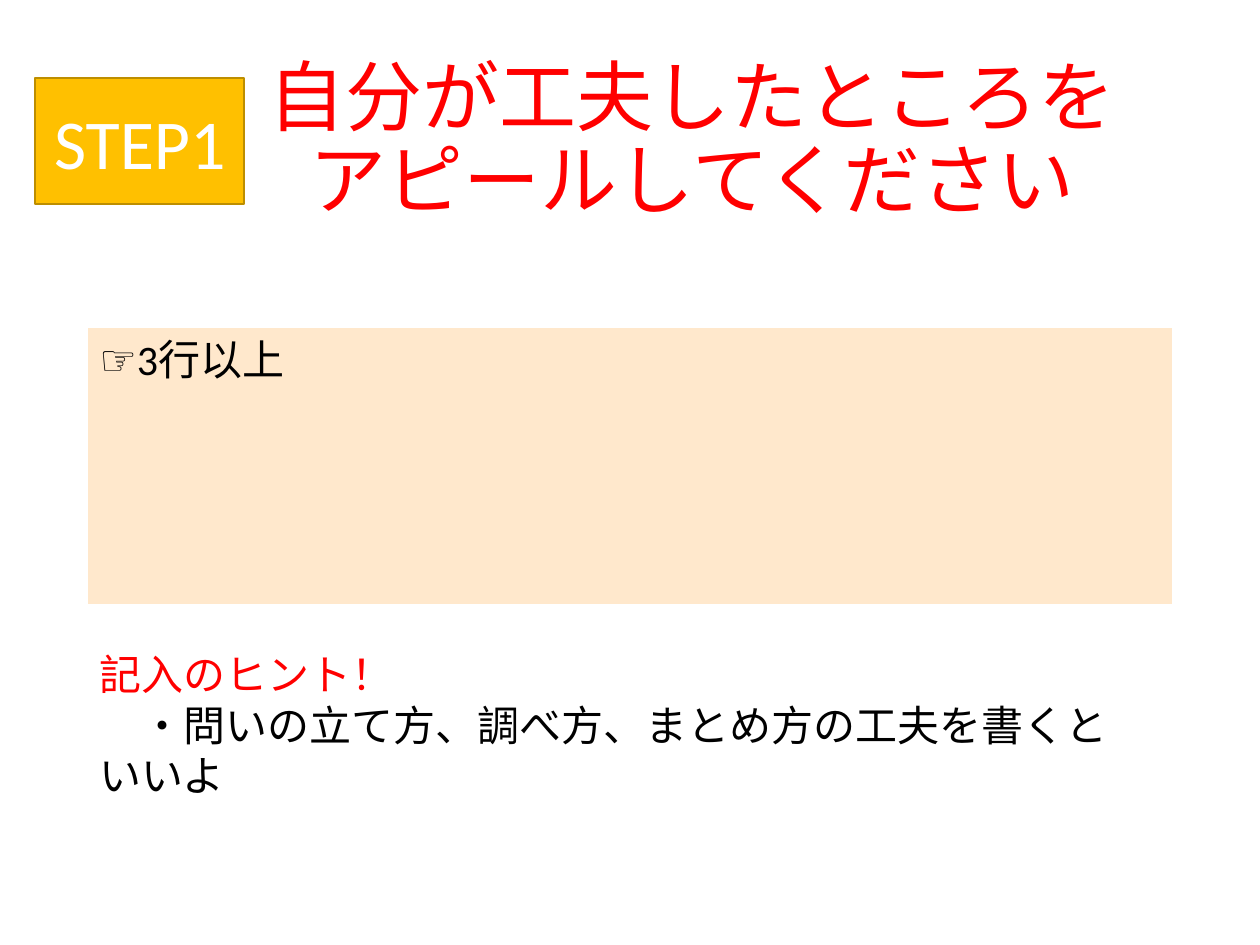
from dataclasses import dataclass

from lxml import etree
from pptx import Presentation
from pptx.dml.color import RGBColor
from pptx.enum.shapes import MSO_SHAPE
from pptx.enum.text import MSO_ANCHOR, MSO_AUTO_SIZE, PP_ALIGN
from pptx.oxml.ns import qn
from pptx.util import Inches, Pt

RECTANGLE = MSO_SHAPE.RECTANGLE
MIDDLE, TOP = MSO_ANCHOR.MIDDLE, MSO_ANCHOR.TOP
CENTER, LEFT = PP_ALIGN.CENTER, PP_ALIGN.LEFT
NO_FIT, GROW = MSO_AUTO_SIZE.NONE, MSO_AUTO_SIZE.SHAPE_TO_FIT_TEXT


@dataclass(frozen=True)
class Theme:
    font: str = "Calibri"
    accent: str = "FF0000"
    ink: str = "000000"
    paper: str = "FFFFFF"
    badge: str = "FFC000"
    badge_line: str = "BD8E00"
    answer: str = "FFE8CC"
    title_size: int = 44
    badge_size: int = 40
    body_size: int = 24


THEME = Theme()

# Content: "\v" is a line break inside a paragraph
TITLE = "自分が工夫したところを\vアピールしてください"
STEP = "STEP1"
ANSWER_NOTE = "☞3行以上"
HINTS = [
    ("記入のヒント！", THEME.accent),
    ("\u3000・問いの立て方、調べ方、まとめ方の工夫を書くといいよ", THEME.ink),
]

# Layout in inches: the answer area is centred between equal margins
WIDTH, HEIGHT = 10, 7.5
MARGIN = 0.69
ANSWER_TOP, ANSWER_HEIGHT = 2.6, 2.2
HINT_TOP = ANSWER_TOP + ANSWER_HEIGHT + 0.3
AREAS = {
    "title": (1.67, 0.4, 7.65, 1.45),
    "step": (0.28, 0.62, 1.66, 1),
    "answer": (MARGIN, ANSWER_TOP, WIDTH - 2 * MARGIN, ANSWER_HEIGHT),
    "note": (MARGIN, ANSWER_TOP, 3.41, 0.5),
    "hints": (MARGIN, HINT_TOP, WIDTH - MARGIN - 1, 0.91),
}


def area(name):
    return [Inches(value) for value in AREAS[name]]


def color(code):
    return RGBColor.from_string(code)


def write(box, lines, size, align=LEFT, anchor=TOP, fit=NO_FIT, spacing=None):
    """Fill a shape with (text, colour) paragraphs."""
    frame = box.text_frame
    frame.word_wrap = True
    frame.auto_size = fit
    frame.vertical_anchor = anchor
    for index, (text, ink) in enumerate(lines):
        para = frame.add_paragraph() if index else frame.paragraphs[0]
        para.text = text
        para.alignment = align
        para.line_spacing = spacing
        for span in para.runs:
            span.font.name = THEME.font
            span.font.size = Pt(size)
            span.font.color.rgb = color(ink)


def border_cell(cell, code, points):
    properties = cell._tc.get_or_add_tcPr()
    for index, side in enumerate(("a:lnL", "a:lnR", "a:lnT", "a:lnB")):
        line = etree.Element(qn(side), w=str(Pt(points)))
        fill = etree.SubElement(line, qn("a:solidFill"))
        etree.SubElement(fill, qn("a:srgbClr"), val=code)
        properties.insert(index, line)


def main():
    deck = Presentation()
    deck.slide_width, deck.slide_height = Inches(WIDTH), Inches(HEIGHT)
    page = deck.slides.add_slide(deck.slide_layouts[5])
    shapes = page.shapes

    # Title
    title = shapes.title
    title.left, title.top, title.width, title.height = area("title")
    write(title, [(TITLE, THEME.accent)], THEME.title_size,
          align=CENTER, anchor=MIDDLE, spacing=0.9)

    # Step badge
    badge = shapes.add_shape(RECTANGLE, *area("step"))
    badge.shadow.inherit = False
    badge.fill.solid()
    badge.fill.fore_color.rgb = color(THEME.badge)
    badge.line.color.rgb = color(THEME.badge_line)
    badge.line.width = Pt(1)
    write(badge, [(STEP, THEME.paper)], THEME.badge_size,
          align=CENTER, anchor=MIDDLE)

    # Answer area
    cell = shapes.add_table(1, 1, *area("answer")).table.cell(0, 0)
    cell.fill.solid()
    cell.fill.fore_color.rgb = color(THEME.answer)
    border_cell(cell, THEME.paper, 1)

    # Note in the answer area, then the hints below it
    for name, lines in (("note", [(ANSWER_NOTE, THEME.ink)]), ("hints", HINTS)):
        box = shapes.add_textbox(*area(name))
        write(box, lines, THEME.body_size, fit=GROW)

    deck.save("out.pptx")


if __name__ == "__main__":
    main()
